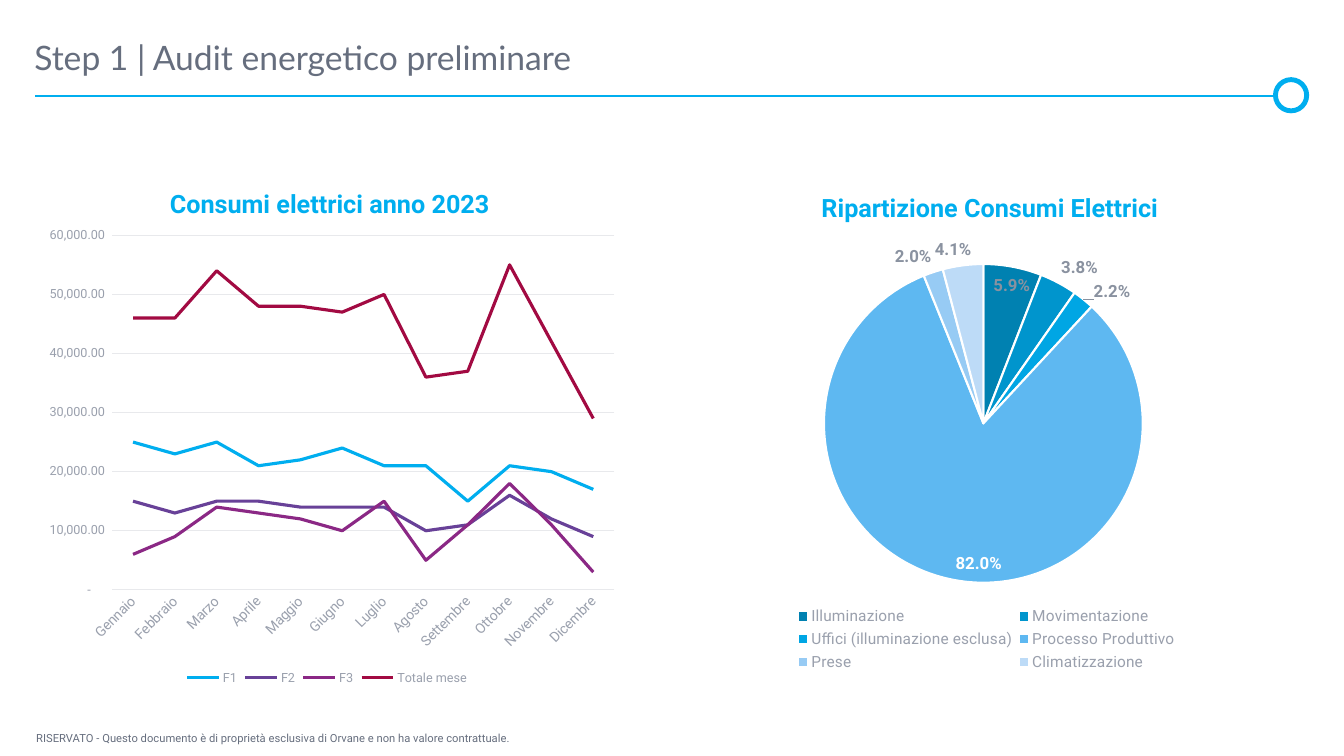
from lxml import etree
from pptx import Presentation
from pptx.chart.data import CategoryChartData
from pptx.dml.color import RGBColor
from pptx.enum.chart import XL_CHART_TYPE as ChartType
from pptx.enum.chart import XL_LABEL_POSITION as LabelPosition
from pptx.enum.chart import XL_LEGEND_POSITION as LegendPosition
from pptx.enum.chart import XL_TICK_MARK as TickMark
from pptx.enum.shapes import MSO_CONNECTOR, MSO_SHAPE
from pptx.enum.text import MSO_ANCHOR, PP_ALIGN
from pptx.oxml.ns import qn
from pptx.util import Inches, Pt

COLORS = {
    "accent": "00AEEF", "text": "666E7E", "muted": "9AA0AD",
    "label": "8A92A0", "grid": "E8E9EC", "white": "FFFFFF",
}
MONTHS = ["Gennaio", "Febbraio", "Marzo", "Aprile", "Maggio", "Giugno", "Luglio",
          "Agosto", "Settembre", "Ottobre", "Novembre", "Dicembre"]
# Monthly consumption in thousands: name, line color, values
CONSUMPTION = [
    ("F1", "00AEEF", [25, 23, 25, 21, 22, 24, 21, 21, 15, 21, 20, 17]),
    ("F2", "684198", [15, 13, 15, 15, 14, 14, 14, 10, 11, 16, 12, 9]),
    ("F3", "8B2885", [6, 9, 14, 13, 12, 10, 15, 5, 11, 18, 11, 3]),
    ("Totale mese", "A20A42", [46, 46, 54, 48, 48, 47, 50, 36, 37, 55, 42, 29]),
]
# Share of consumption: name, slice color, percent
SHARES = [
    ("Illuminazione", "0081B1", 5.9),
    ("Movimentazione", "0095CD", 3.8),
    ("Uffici (illuminazione esclusa)", "00A6E4", 2.2),
    ("Processo Produttivo", "5EB8F1", 82),
    ("Prese", "97CBF4", 2),
    ("Climatizzazione", "BDDBF7", 4.1),
]
MAIN_SLICE = 3
VALUE_FORMAT = '_(* #,##0.00_);_(* \\(#,##0.00\\);_(* "-"??_);_(@_)'


def rgb(name):
    return RGBColor.from_string(COLORS.get(name, name))


def style_font(font, size, color, name="Roboto", bold=False):
    font.size, font.name, font.bold = Pt(size), name, bold
    font.color.rgb = rgb(color)


def style_line(line, color, width):
    line.color.rgb = rgb(color)
    line.width = Pt(width)


def set_layout(element, index, x, y, w=None, h=None, inner=False):
    """Place a chart part by fractions of the chart area."""
    for old in element.findall(qn("c:layout")):
        element.remove(old)
    layout = etree.Element(qn("c:layout"))
    manual = etree.SubElement(layout, qn("c:manualLayout"))
    settings = [("layoutTarget", "inner" if inner else None),
                ("xMode", "edge"), ("yMode", "edge"),
                ("x", x), ("y", y), ("w", w), ("h", h)]
    for tag, value in settings:
        if value is not None:
            etree.SubElement(manual, qn(f"c:{tag}")).set("val", str(value))
    element.insert(index, layout)


def add_title(slide, text):
    title = slide.shapes.title
    title.left, title.top = Inches(0.34), Inches(0.18)
    title.width, title.height = Inches(12.18), Inches(0.59)
    frame = title.text_frame
    frame.text = text
    frame.vertical_anchor = MSO_ANCHOR.BOTTOM
    frame.margin_left = frame.margin_right = frame.margin_top = frame.margin_bottom = 0
    paragraph = frame.paragraphs[0]
    paragraph.alignment = PP_ALIGN.LEFT
    paragraph.line_spacing = 0.9
    style_font(paragraph.runs[0].font, 24, "text", "Lato")


def add_header_rule(slide):
    circle = slide.shapes.add_shape(MSO_SHAPE.OVAL, Inches(12.65), Inches(0.79),
                                    Inches(0.31), Inches(0.31))
    circle.shadow.inherit = False
    circle.fill.background()
    style_line(circle.line, "accent", 3.5)
    rule = slide.shapes.add_connector(MSO_CONNECTOR.STRAIGHT, Inches(0.35), Inches(0.95),
                                      Inches(12.65), Inches(0.95))
    style_line(rule.line, "accent", 1.5)
    etree.SubElement(rule._element.spPr, qn("a:effectLst"))


def add_footer(slide, text):
    box = slide.shapes.add_textbox(Inches(0.26), Inches(7.21), Inches(6.85), Inches(0.24))
    box.text_frame.word_wrap = True
    box.text_frame.text = text
    style_font(box.text_frame.paragraphs[0].runs[0].font, 8, "text")


def add_chart(slide, kind, box, data, title, title_at, plot_at, legend_at, legend_size):
    """Add a chart with its title, plot area and bottom legend in place."""
    chart = slide.shapes.add_chart(kind, *map(Inches, box), data).chart
    style_font(chart.font, 10, "text")
    chart.has_title = True
    chart.chart_title.text_frame.text = title
    style_font(chart.chart_title.text_frame.paragraphs[0].runs[0].font, 18, "accent", bold=True)
    chart.has_legend = True
    chart.legend.position = LegendPosition.BOTTOM
    chart.legend.include_in_layout = False
    style_font(chart.legend.font, legend_size, "muted")
    set_layout(chart.chart_title._element, 1, *title_at)
    set_layout(chart.legend._element, 1, *legend_at)
    set_layout(chart._chartSpace.chart.plotArea, 0, *plot_at, inner=True)
    chart.plots[0].vary_by_categories = kind == ChartType.PIE
    return chart


def add_consumption_chart(slide):
    data = CategoryChartData(number_format=VALUE_FORMAT)
    data.categories = MONTHS
    for name, _, thousands in CONSUMPTION:
        data.add_series(name, [value * 1000 for value in thousands])
    chart = add_chart(slide, ChartType.LINE, (0.35, 1.6, 5.86, 5.25), data,
                      "Consumi elettrici anno 2023", (0.22, 0.04),
                      (0.13, 0.14, 0.85, 0.67), (0.25, 0.96), 9)
    for series, (_, color, _) in zip(chart.plots[0].series, CONSUMPTION):
        style_line(series.format.line, color, 2.25)
        series.smooth = False

    # Axes
    months, values = chart.category_axis, chart.value_axis
    for axis, size in ((months, 10), (values, 9)):
        axis.major_tick_mark = axis.minor_tick_mark = TickMark.NONE
        style_font(axis.tick_labels.font, size, "muted")
    style_line(months.format.line, "grid", 0.75)
    months._element.find(qn("c:txPr")).find(qn("a:bodyPr")).set("rot", "-2700000")
    values.minimum_scale, values.maximum_scale, values.major_unit = 0, 60000, 10000
    values.tick_labels.number_format = VALUE_FORMAT
    values.tick_labels.number_format_is_linked = False
    values.format.line.fill.background()
    style_line(values.major_gridlines.format.line, "grid", 0.75)


def add_share_chart(slide):
    data = CategoryChartData()
    data.categories = [name for name, _, _ in SHARES]
    data.add_series("Series 1", [share for _, _, share in SHARES])
    chart = add_chart(slide, ChartType.PIE, (6.67, 1.6, 6.23, 5.1), data,
                      "Ripartizione Consumi Elettrici", (0.23, 0.05),
                      (0.24, 0.2, 0.51, 0.62), (0.19, 0.86, 0.62, 0.14), 11)
    series = chart.plots[0].series[0]
    for index, (_, color, _) in enumerate(SHARES):
        slice_format = series.points[index].format
        slice_format.fill.solid()
        slice_format.fill.fore_color.rgb = rgb(color)
        style_line(slice_format.line, "white", 1.5)

    # Percent labels, white and inside on the largest slice
    labels = series.data_labels
    labels.show_value, labels.show_percentage = False, True
    labels.number_format, labels.number_format_is_linked = "0.0%", False
    labels.position = LabelPosition.BEST_FIT
    style_font(labels.font, 12, "label", bold=True)
    main_label = series.points[MAIN_SLICE].data_label
    style_font(main_label.font, 12, "white", bold=True)
    main_label.position = LabelPosition.INSIDE_END
    element = labels._element.find(qn("c:dLbl"))
    element.find(qn("c:showVal")).set("val", "0")
    element.find(qn("c:showPercent")).set("val", "1")
    number_format = etree.Element(qn("c:numFmt"), formatCode="0.0%", sourceLinked="0")
    element.insert(1, number_format)


def main():
    presentation = Presentation()
    presentation.slide_width, presentation.slide_height = Inches(13.33), Inches(7.5)
    slide = presentation.slides.add_slide(presentation.slide_layouts[5])
    add_header_rule(slide)
    add_footer(slide, "RISERVATO - Questo documento è di proprietà esclusiva di Orvane "
                      "e non ha valore contrattuale.")
    add_title(slide, "Step 1 | Audit energetico preliminare")
    add_share_chart(slide)
    add_consumption_chart(slide)
    presentation.save("out.pptx")


if __name__ == "__main__":
    main()
